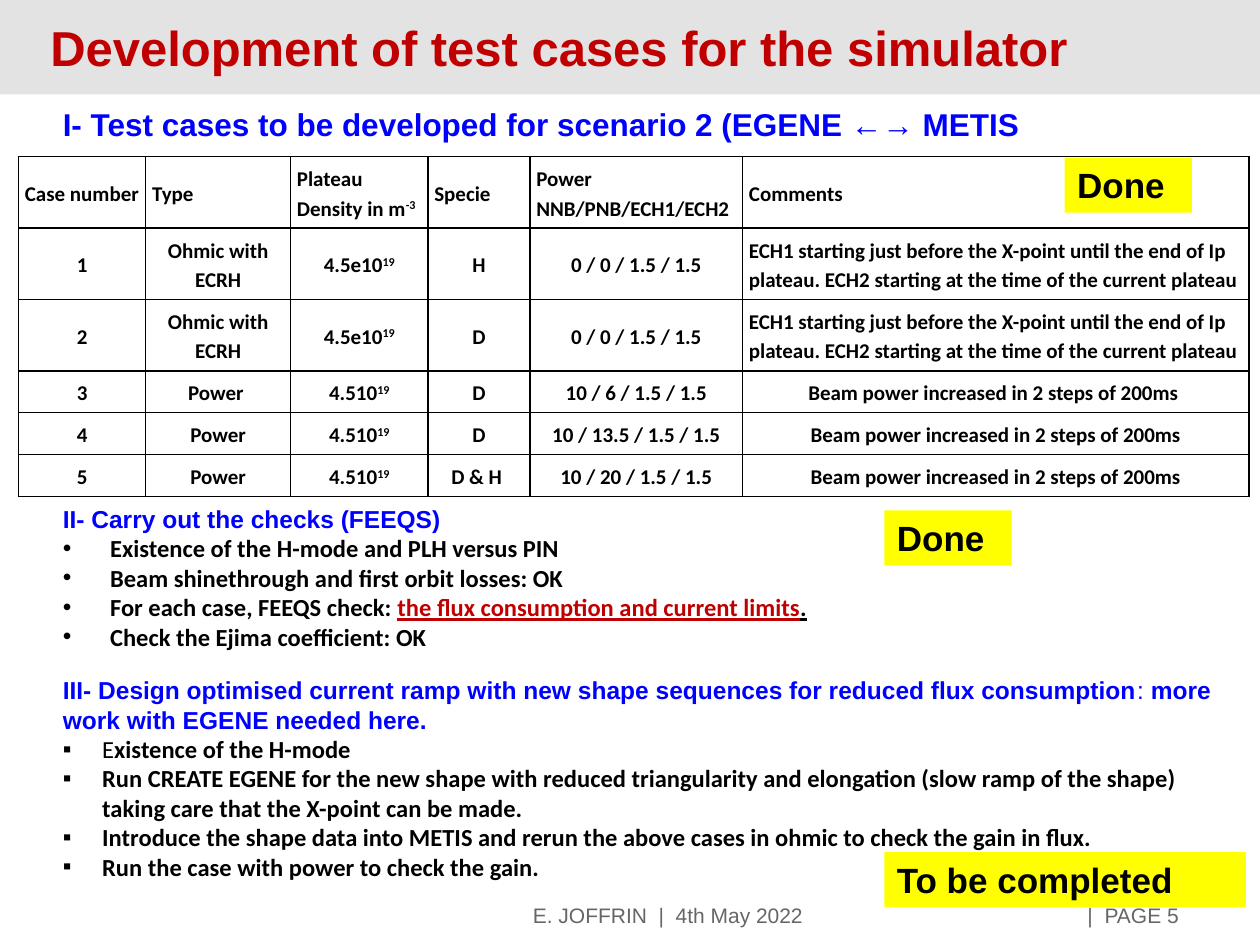
import pptx
import pptx.dml.color
import pptx.enum.shapes
import pptx.enum.text
import pptx.util
from lxml import etree
from pptx.oxml.ns import qn

Pt = pptx.util.Pt
MIDDLE = pptx.enum.text.MSO_ANCHOR.MIDDLE
LEFT, CENTER = pptx.enum.text.PP_ALIGN.LEFT, pptx.enum.text.PP_ALIGN.CENTER
BLACK, BLUE, RED, GREY = "000000", "0000FF", "C00000", "666666"


def color(value):
    return pptx.dml.color.RGBColor.from_string(value)


class SlideBuilder:
    heading_font, body_font = "Arial", "Calibri"

    def __init__(self, slide):
        self.slide = slide

    def style(self, font, name, size, ink, bold=True):
        font.name, font.size, font.bold = name, Pt(size), bold
        font.color.rgb = color(ink)

    def runs(self, paragraph, parts):
        """Each part is a string or a (string, options) pair."""
        for part in [parts] if isinstance(parts, str) else parts:
            text, options = (part, {}) if isinstance(part, str) else part
            run = paragraph.add_run()
            run.text = text
            if "bold" in options:
                run.font.bold = options["bold"]
            if "ink" in options:
                run.font.color.rgb = color(options["ink"])
            if options.get("underline"):
                run.font.underline = True
            if options.get("superscript"):
                run._r.get_or_add_rPr().set("baseline", "30000")

    def text(self, box, parts, size, ink, bold=True, inset=True):
        shape = self.slide.shapes.add_textbox(*map(Pt, box))
        frame = shape.text_frame
        frame.word_wrap = True
        if not inset:
            frame.vertical_anchor = MIDDLE
            frame.margin_left = frame.margin_right = 0
            frame.margin_top = frame.margin_bottom = 0
        paragraph = frame.paragraphs[0]
        self.style(paragraph.font, self.heading_font, size, ink, bold)
        self.runs(paragraph, parts)
        return frame

    def section(self, box, heading, bullet, indent, items):
        frame = self.text(box, heading, 14, BLUE)
        for item in items:
            paragraph = frame.add_paragraph()
            properties = paragraph._p.get_or_add_pPr()
            properties.set("marL", str(Pt(indent)))
            properties.set("indent", str(-Pt(indent)))
            etree.SubElement(properties, qn("a:buFont")).set("typeface", "Arial")
            etree.SubElement(properties, qn("a:buChar")).set("char", bullet)
            self.style(paragraph.font, self.body_font, 14, BLACK)
            self.runs(paragraph, item)

    def rectangle(self, box, fill):
        shape = self.slide.shapes.add_shape(
            pptx.enum.shapes.MSO_SHAPE.RECTANGLE, *map(Pt, box))
        shape.shadow.inherit = False
        shape.fill.solid()
        shape.fill.fore_color.rgb = color(fill)
        shape.line.fill.background()
        return shape

    def status(self, left, top, width, text):
        frame = self.rectangle((left, top, width, 31.5), "FFFF00").text_frame
        frame.word_wrap = True
        frame.vertical_anchor = pptx.enum.text.MSO_ANCHOR.TOP
        paragraph = frame.paragraphs[0]
        paragraph.alignment = LEFT
        self.style(paragraph.font, self.heading_font, 20, BLACK)
        self.runs(paragraph, text)

    def table(self, left, top, widths, heights, rows):
        table = self.slide.shapes.add_table(
            len(rows), len(widths), Pt(left), Pt(top),
            Pt(sum(widths)), Pt(sum(heights))).table
        table.first_row = table.horz_banding = False
        for column, width in zip(table.columns, widths):
            column.width = Pt(width)
        for row, height in zip(table.rows, heights):
            row.height = Pt(height)
        for row_index, row in enumerate(rows):
            for column_index, parts in enumerate(row):
                centered = row_index > 0 and not (column_index == 5 and row_index < 3)
                self.cell(table.cell(row_index, column_index), parts,
                          CENTER if centered else LEFT)

    def cell(self, cell, parts, alignment):
        cell.vertical_anchor = MIDDLE
        cell.margin_left = cell.margin_right = Pt(3.6)
        cell.margin_top = cell.margin_bottom = Pt(3.6)
        properties = cell._tc.get_or_add_tcPr()
        for side in ("lnL", "lnR", "lnT", "lnB"):
            line = etree.SubElement(properties, qn("a:" + side), w=str(Pt(1)))
            fill = etree.SubElement(line, qn("a:solidFill"))
            etree.SubElement(fill, qn("a:srgbClr"), val=BLACK)
        cell.fill.background()
        paragraph = cell.text_frame.paragraphs[0]
        paragraph.alignment = alignment
        paragraph.line_spacing = 1.15
        self.style(paragraph.font, self.body_font, 12, BLACK)
        self.runs(paragraph, parts)


def power_of_ten(base, exponent):
    return [base, (exponent, {"superscript": True})]


presentation = pptx.Presentation()
presentation.slide_width, presentation.slide_height = Pt(720), Pt(540)
builder = SlideBuilder(presentation.slides.add_slide(presentation.slide_layouts[6]))

# Footer
builder.text((304.5, 508.3, 316.5, 28.8), "E. JOFFRIN  |  4th May 2022",
             12, GREY, bold=False, inset=False)
builder.text((621.4, 508.3, 94.3, 28.8), "|  PAGE 5", 12, GREY, bold=False, inset=False)

# Title band
builder.rectangle((0, 0, 720, 54), "E3E3E3")
builder.text((28.8, 5.8, 607, 42.5), "Development of test cases for the simulator",
             28, RED, inset=False)

# Test case table
ramp = ("ECH1 starting just before the X-point until the end of Ip plateau. "
        "ECH2 starting at the time of the current plateau")
steps = "Beam power increased in 2 steps of 200ms"
ohmic_density = power_of_ten("4.5e10", "19")
power_density = power_of_ten("4.510", "19")
cases = [
    ("Case number", "Type", power_of_ten("Plateau Density in m", "-3"), "Specie",
     "Power NNB/PNB/ECH1/ECH2", "Comments"),
    ("1", "Ohmic with ECRH", ohmic_density, "H", "0 / 0 / 1.5 / 1.5", ramp),
    ("2", "Ohmic with ECRH", ohmic_density, "D", "0 / 0 / 1.5 / 1.5", ramp),
    ("3", "Power ", power_density, "D", "10 / 6 / 1.5 / 1.5", steps + " "),
    ("4", "Power", power_density, "D", "10 / 13.5 / 1.5 / 1.5", steps),
    ("5", "Power", power_density, "D & H ", "10 / 20 / 1.5 / 1.5", steps),
]
builder.table(10.6, 89.5, [72.7, 82.8, 78.5, 58.3, 121.5, 289.4],
              [40.8] * 3 + [24] * 3, cases)

# Sections
builder.section(
    (28.8, 284.4, 673.2, 92.2), "II- Carry out the checks (FEEQS)", "•", 27, [
        "Existence of the H-mode and PLH versus PIN",
        "Beam shinethrough and first orbit losses: OK",
        ["For each case, FEEQS check: ",
         ("the flux consumption and current limits", {"ink": RED, "underline": True}),
         (".", {"underline": True})],
        "Check the Ejima coefficient: OK",
    ])
builder.text((28.8, 56.2, 607, 28.8),
             "I- Test cases to be developed for scenario 2 (EGENE ←→ METIS", 18, BLUE)
builder.section(
    (28.8, 382.3, 685.4, 126),
    ["III- Design optimised current ramp with new shape sequences for reduced "
     "flux consumption", (": ", {"bold": False}), "more work with EGENE needed here."],
    "▪", 22.5, [
        [("E", {"bold": False}), "xistence of the H-mode"],
        "Run CREATE EGENE for the new shape with reduced triangularity and elongation "
        "(slow ramp of the shape) taking care that the X-point can be made.",
        "Introduce the shape data into METIS and rerun the above cases in ohmic to "
        "check the gain in flux.",
        "Run the case with power to check the gain.",
    ])

# Status labels
builder.status(608.4, 90, 72.7, "Done")
builder.status(505.4, 291.6, 72.7, "Done")
builder.status(505.4, 486.9, 206.6, "To be completed")

presentation.save("out.pptx")
